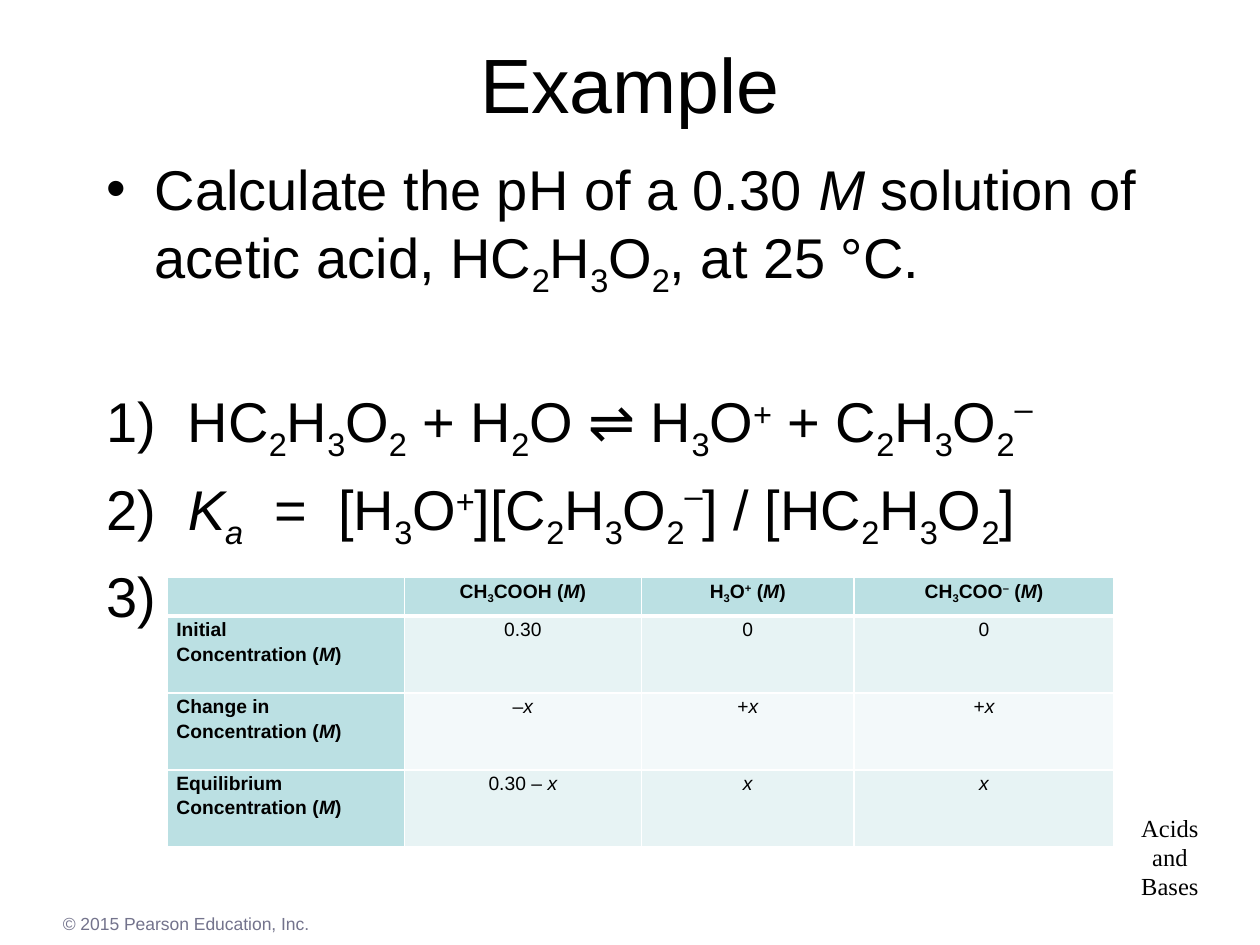
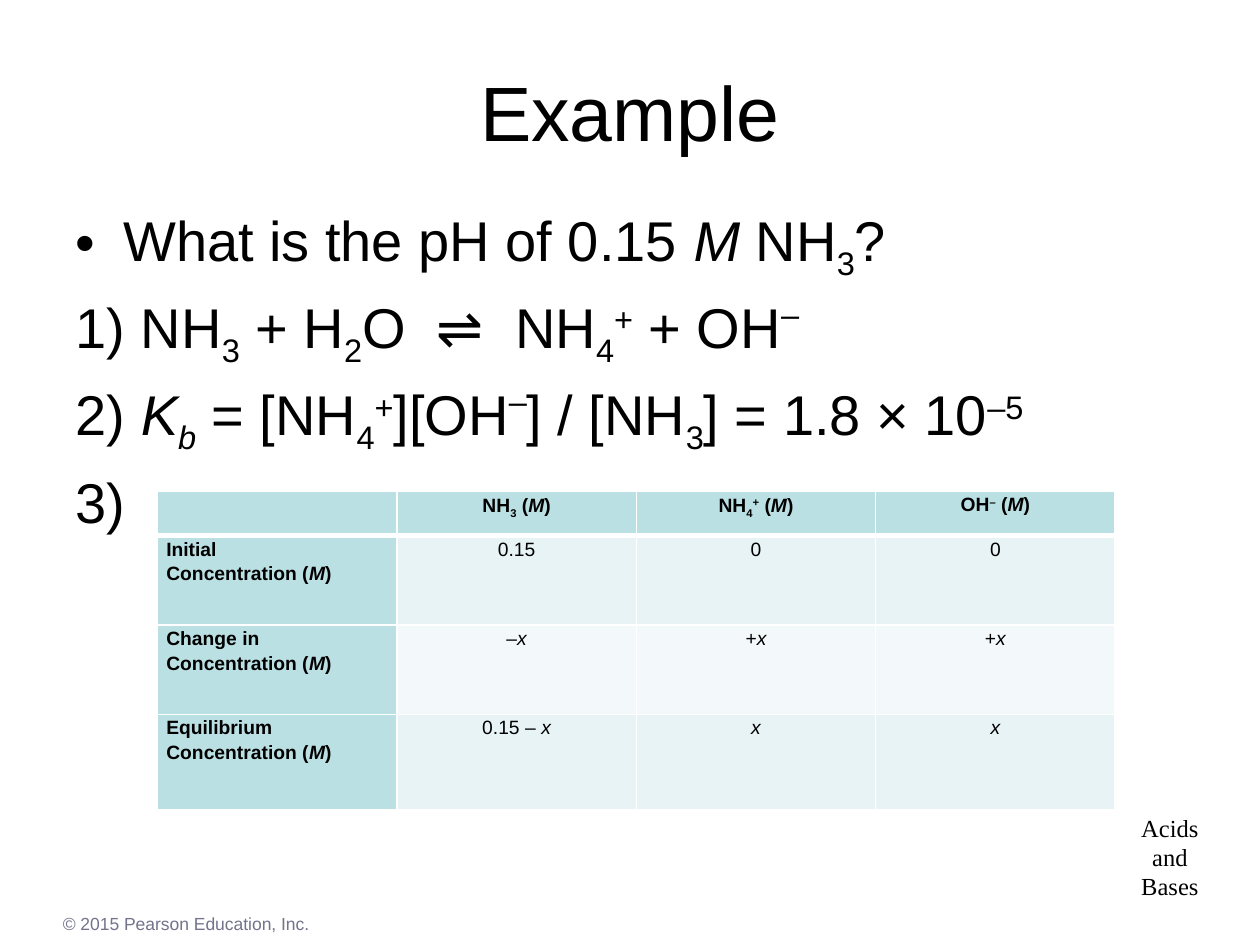
"""Build two acid-base equilibrium example slides with ICE tables."""
from lxml import etree
from pptx import Presentation
from pptx.dml.color import RGBColor
from pptx.enum.text import MSO_ANCHOR, PP_ALIGN
from pptx.oxml.ns import qn
from pptx.util import Inches, Pt

LEFT, CENTER = PP_ALIGN.LEFT, PP_ALIGN.CENTER
TOP, MIDDLE = MSO_ANCHOR.TOP, MSO_ANCHOR.MIDDLE

COLORS = {"text": "000000", "footer": "73738C", "border": "FFFFFF",
          "head": "BBE0E3", "odd": "E7F3F4", "even": "F3F9FA"}
FORMATS = {
    "title": {"name": "Arial", "size": Pt(44), "color": "text"},
    "body": {"name": "Arial", "size": Pt(32), "color": "text"},
    "footer": {"name": "Arial", "size": Pt(10), "color": "footer"},
    "chapter": {"name": "Times New Roman", "size": Pt(14), "color": "text"},
    "label": {"name": "Arial", "size": Pt(11), "color": "text", "bold": True},
    "value": {"name": "Arial", "size": Pt(11), "color": "text", "bold": False},
}

BASELINES = {"~": -25000, "^": 30000, "`": 40000}
WIDE_SPACING = "890"
HANG = Inches(0.38)
BODY_GAP = 6.2

CHAPTER = ["Acids", "and", "Bases"]
COPYRIGHT = ["© 2015 Pearson Education, Inc."]
ROW_LABELS = [["Initial", "Concentration (*M*)"],
              ["Change in Concentration (*M*)"],
              ["Equilibrium Concentration (*M*)"]]
CHANGES = ["–*x*", "+*x*", "+*x*"]

SLIDES = [
    {
        "title": "Example", "title_top": 0.03,
        "body_at": (0.75, 1.18, 8.5, 2.75),
        "question": "Calculate the pH of a 0.30 *M* solution of acetic acid, "
                    "HC~2~H~3~O~2~, at 25 °C.",
        "steps": ["|HC~2~H~3~O~2~ + H~2~O ⇌ H~3~O^+^ + C~2~H~3~O~2~`–`",
                  "|*K~a~*|=|[H~3~O^+^][C~2~H~3~O~2~`–`] / [HC~2~H~3~O~2~]",
                  " "],
        "steps_gap": 50.5,
        "table_at": (1.33, 4.58),
        "cols": [1.88, 1.88, 1.69, 2.06],
        "rows": [0.31, 0.61, 0.61, 0.61],
        "species": ["CH~3~COOH", "H~3~O^+^", "CH~3~COO^–^"],
        "initial": "0.30",
    },
    {
        "title": "Example", "title_top": 0.25,
        "body_at": (0.5, 1.58, 9.08, 2.83),
        "question": "What is the pH of 0.15 *M* NH~3~?",
        "steps": [" NH~3~ + H~2~O|⇌|NH~4~^+^ + OH`–`",
                  " *K~b~* = [NH~4~^+^][OH`–`] / [NH~3~] = 1.8 × 10^–5^",
                  " "],
        "steps_gap": BODY_GAP,
        "table_at": (1.25, 3.9),
        "cols": [1.9] * 4,
        "rows": [0.35, 0.71, 0.71, 0.76],
        "species": ["NH~3~", "NH~4~^+^", "OH^–^"],
        "initial": "0.15",
    },
]


def add_run(p, text, style, italic=False, baseline=0, wide=False):
    r = p.add_run()
    r.text = text
    for key, value in FORMATS[style].items():
        if key == "color":
            r.font.color.rgb = RGBColor.from_string(COLORS[value])
        else:
            setattr(r.font, key, value)
    r.font.italic = italic
    rPr = r._r.get_or_add_rPr()
    if baseline:
        rPr.set("baseline", str(baseline))
    if wide:
        rPr.set("spc", WIDE_SPACING)


def add_marked(p, text, style):
    italic, baseline, chunk = False, 0, ""
    for ch in text + "\0":
        if ch not in "*|\0" and ch not in BASELINES:
            chunk += ch
            continue
        if chunk:
            add_run(p, chunk, style, italic, baseline)
        chunk = ""
        if ch == "*":
            italic = not italic
        elif ch == "|":
            add_run(p, " ", style, italic, baseline, wide=True)
        elif ch in BASELINES:
            baseline = 0 if baseline else BASELINES[ch]


def fill_text(tf, lines, style, align=LEFT, spacing=None):
    for i, line in enumerate(lines):
        p = tf.paragraphs[0] if i == 0 else tf.add_paragraph()
        p.alignment = align
        p.line_spacing = spacing
        add_marked(p, line, style)


def add_text(s, at, lines, style, align=LEFT, anchor=TOP):
    tf = s.shapes.add_textbox(*map(Inches, at)).text_frame
    tf.word_wrap = True
    tf.vertical_anchor = anchor
    fill_text(tf, lines, style, align)
    return tf


def add_bullet(p, tag, **attrs):
    pPr = p._p.get_or_add_pPr()
    pPr.set("marL", str(HANG))
    pPr.set("indent", str(-HANG))
    etree.SubElement(pPr, qn("a:buFont"), typeface="Arial")
    etree.SubElement(pPr, qn(tag), attrs)


def add_body(s, slide):
    tf = add_text(s, slide["body_at"], [slide["question"], *slide["steps"]], "body")
    question, *steps = tf.paragraphs
    add_bullet(question, "a:buChar", char="•")
    for i, p in enumerate(steps):
        p.space_before = Pt(BODY_GAP if i else slide["steps_gap"])
        add_bullet(p, "a:buAutoNum", type="arabicParenR")


def add_borders(cell, row):
    tcPr = cell._tc.get_or_add_tcPr()
    widths = {"L": 1, "R": 1, "T": 3 if row == 1 else 1, "B": 3 if row == 0 else 1}
    for side, width in widths.items():
        ln = etree.SubElement(tcPr, qn(f"a:ln{side}"), w=str(Pt(width)))
        fill = etree.SubElement(ln, qn("a:solidFill"))
        etree.SubElement(fill, qn("a:srgbClr"), val=COLORS["border"])


def add_ice_table(s, slide):
    initial = slide["initial"]
    values = [[initial, "0", "0"], CHANGES, [f"{initial} – *x*", "*x*", "*x*"]]
    grid = [[[]] + [[f"{name} (*M*)"] for name in slide["species"]]]
    grid += [[label] + [[v] for v in row] for label, row in zip(ROW_LABELS, values)]
    cols, rows = slide["cols"], slide["rows"]
    size = (sum(cols), sum(rows))
    table = s.shapes.add_table(len(rows), len(cols),
                               *map(Inches, slide["table_at"] + size)).table
    for column, width in zip(table.columns, cols):
        column.width = Inches(width)
    for i, (row, height) in enumerate(zip(table.rows, rows)):
        row.height = Inches(height)
        for j, cell in enumerate(row.cells):
            is_label = i == 0 or j == 0
            cell.margin_left = cell.margin_right = Inches(0.07)
            cell.margin_top = cell.margin_bottom = 0
            add_borders(cell, i)
            cell.fill.solid()
            shade = "head" if is_label else "odd" if i % 2 else "even"
            cell.fill.fore_color.rgb = RGBColor.from_string(COLORS[shade])
            fill_text(cell.text_frame, grid[i][j], "label" if is_label else "value",
                      CENTER if j else LEFT, 1.15)


def add_slide(prs, slide):
    s = prs.slides.add_slide(prs.slide_layouts[6])
    chapter = add_text(s, (8.96, 6.4, 0.65, 0.8), CHAPTER, "chapter", CENTER)
    chapter.margin_left = chapter.margin_right = 0
    add_text(s, (0.4, 7.2, 9, 0.27), COPYRIGHT, "footer")
    add_text(s, (0, slide["title_top"], 10, 1.25), [slide["title"]], "title",
             CENTER, MIDDLE)
    add_body(s, slide)
    add_ice_table(s, slide)


def main():
    prs = Presentation()
    prs.slide_width, prs.slide_height = Inches(10), Inches(7.5)
    for slide in SLIDES:
        add_slide(prs, slide)
    prs.save("out.pptx")


if __name__ == "__main__":
    main()
